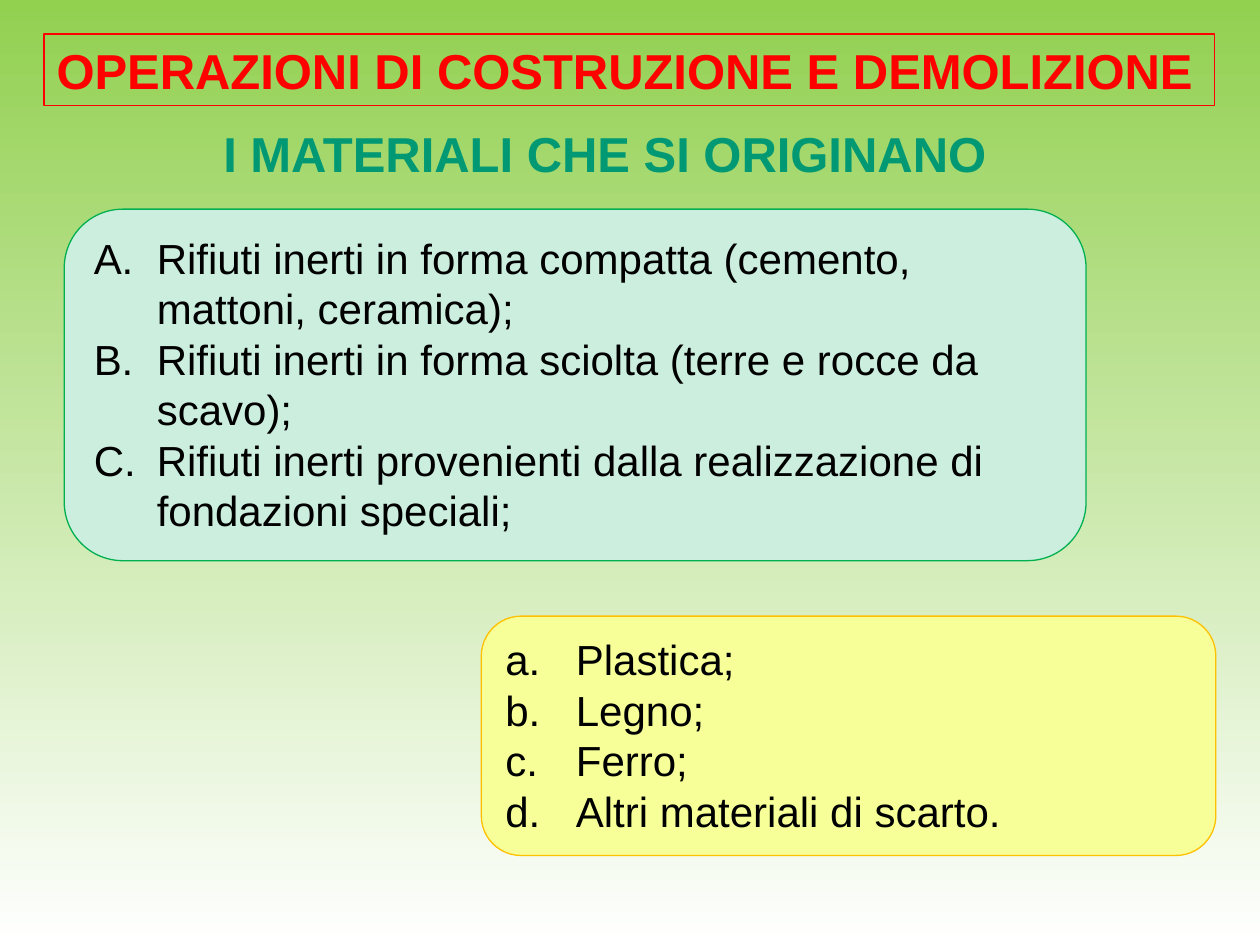
from dataclasses import dataclass
from typing import Optional

from lxml.etree import SubElement
from pptx import Presentation
from pptx.dml.color import RGBColor
from pptx.enum.shapes import MSO_SHAPE as Shape
from pptx.enum.text import MSO_ANCHOR as Anchor, MSO_AUTO_SIZE as AutoSize, PP_ALIGN as Align
from pptx.oxml.ns import qn
from pptx.util import Inches, Pt

SLIDE_WIDTH, SLIDE_HEIGHT = Inches(10), Inches(7.5)
COLUMNS, ROWS = 100, 75
FONT = "Arial"


@dataclass
class Numbering:
    style: str
    indent: float  # columns
    has_tab: bool = False


@dataclass
class Panel:
    """A box of text; left and width in columns, top and height in rows."""
    left: float
    top: float
    width: float
    height: float
    lines: list[str]
    size: int
    color: str = "000000"
    bold: bool = False
    align: Align = Align.LEFT
    outline: Optional[str] = None
    fill: Optional[str] = None
    numbering: Optional[Numbering] = None


PANELS = [
    Panel(5.1, 16.6, 81.1, 27.9,
          ["Rifiuti inerti in forma compatta (cemento, mattoni, ceramica);",
           "Rifiuti inerti in forma sciolta (terre e rocce da scavo);",
           "Rifiuti inerti provenienti dalla realizzazione di fondazioni speciali;"],
          24, outline="00B050", fill="CCEEDF",
          numbering=Numbering("alphaUcPeriod", 5, has_tab=True)),
    Panel(38.2, 48.9, 58.3, 19,
          ["Plastica;", "Legno;", "Ferro;", "Altri materiali di scarto."],
          24, outline="FFC000", fill="F7FF98",
          numbering=Numbering("alphaLcPeriod", 5.6)),
    Panel(3.5, 2.7, 92.9, 5.7, ["OPERAZIONI DI COSTRUZIONE E DEMOLIZIONE"],
          28, "FF0000", bold=True, outline="FF0000"),
    Panel(16.1, 9.3, 63.8, 5.7, ["I MATERIALI CHE SI ORIGINANO"],
          28, "009973", bold=True, align=Align.CENTER),
]


def rgb(value: str) -> RGBColor:
    return RGBColor.from_string(value)


def across(columns: float) -> int:
    return round(SLIDE_WIDTH * columns / COLUMNS)


def down(rows: float) -> int:
    return round(SLIDE_HEIGHT * rows / ROWS)


def paint_background(slide) -> None:
    fill = slide.background.fill
    fill.gradient()
    fill.gradient_angle = 270
    for stop, position, color in zip(fill.gradient_stops, (0, 1), ("92D050", "FFFFFF")):
        stop.position = position
        stop.color.rgb = rgb(color)


def number_paragraph(paragraph, numbering: Numbering) -> None:
    properties = paragraph._p.get_or_add_pPr()
    indent = str(across(numbering.indent))
    properties.set("marL", indent)
    properties.set("indent", "-" + indent)
    SubElement(properties, qn("a:buAutoNum"), type=numbering.style)
    if numbering.has_tab:
        tabs = SubElement(properties, qn("a:tabLst"))
        SubElement(tabs, qn("a:tab"), pos=indent, algn="l")


def write_text(text_frame, panel: Panel) -> None:
    text_frame.text = "\n".join(panel.lines)
    text_frame.word_wrap = True
    text_frame.auto_size = AutoSize.SHAPE_TO_FIT_TEXT
    text_frame.vertical_anchor = Anchor.TOP
    for paragraph in text_frame.paragraphs:
        paragraph.alignment = panel.align
        if panel.numbering:
            number_paragraph(paragraph, panel.numbering)
        for run in paragraph.runs:
            run.font.name = FONT
            run.font.size = Pt(panel.size)
            run.font.bold = panel.bold
            run.font.color.rgb = rgb(panel.color)


def draw_panel(slide, panel: Panel) -> None:
    place = (across(panel.left), down(panel.top), across(panel.width), down(panel.height))
    if panel.outline:
        kind = Shape.ROUNDED_RECTANGLE if panel.fill else Shape.RECTANGLE
        shape = slide.shapes.add_shape(kind, *place)
        shape.shadow.inherit = False
        shape.line.color.rgb = rgb(panel.outline)
        shape.line.width = Pt(0.75)
        if panel.fill:
            shape.fill.solid()
            shape.fill.fore_color.rgb = rgb(panel.fill)
        else:
            shape.fill.background()
    else:
        shape = slide.shapes.add_textbox(*place)
    write_text(shape.text_frame, panel)


def main() -> None:
    presentation = Presentation()
    presentation.slide_width, presentation.slide_height = SLIDE_WIDTH, SLIDE_HEIGHT
    slide = presentation.slides.add_slide(presentation.slide_layouts[6])
    paint_background(slide)
    for panel in PANELS:
        draw_panel(slide, panel)
    presentation.save("out.pptx")


if __name__ == "__main__":
    main()
